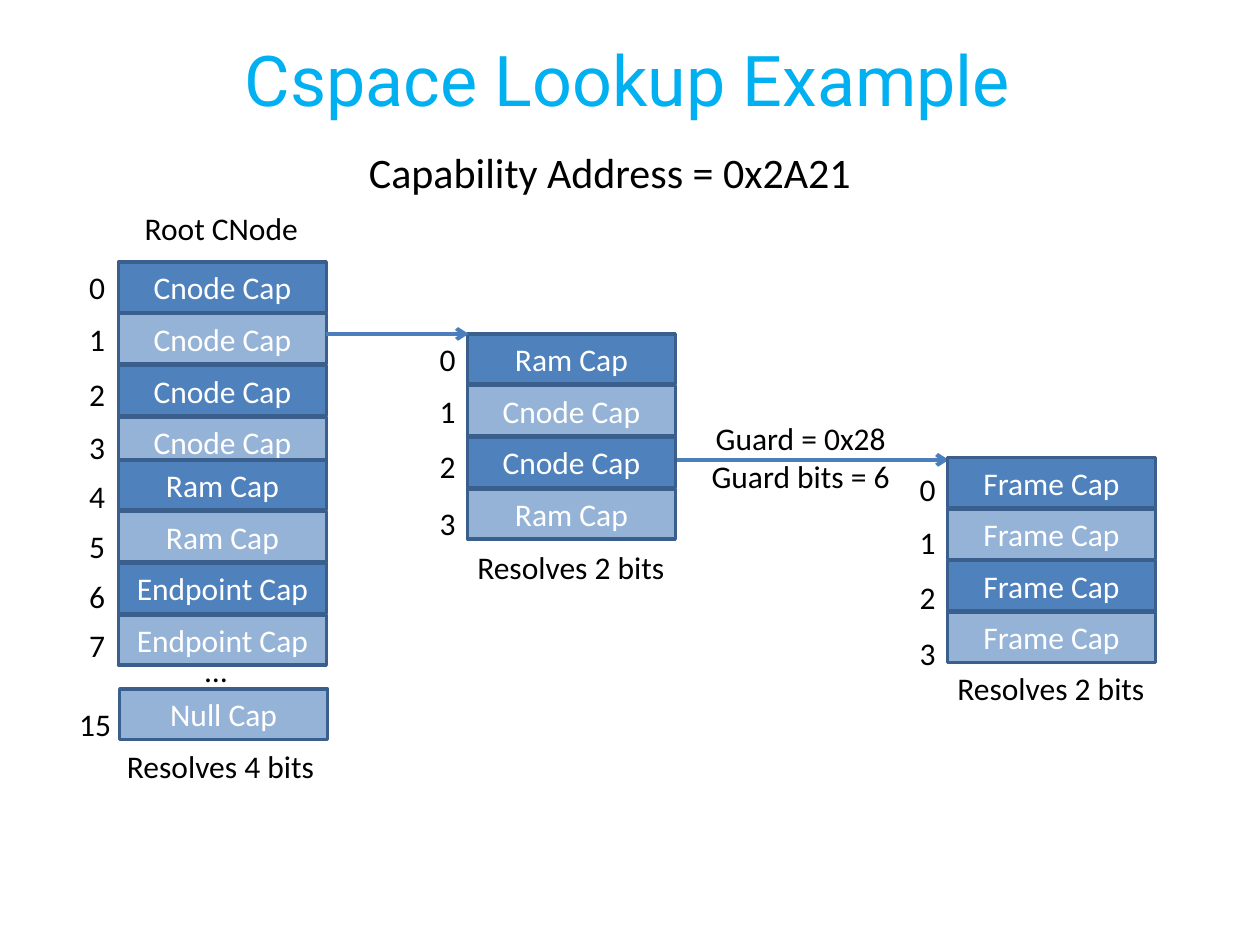
from lxml import etree
from pptx import Presentation
from pptx import util as u
from pptx.dml.color import RGBColor
from pptx.enum import shapes, text
from pptx.oxml import ns

Inches = u.Inches
CELL_WIDTH, CELL_HEIGHT, CELL_PITCH = 1.65, 0.4, 0.41


def color(hex_string):
    return RGBColor.from_string(hex_string)


class Diagram:
    font = "Calibri"
    size = 18
    fills = ("4F81BD", "95B3D7")
    border = "3A5F8C"
    arrow_color = "4B7EBC"

    def __init__(self, slide):
        self.slide = slide
        self.shapes = slide.shapes

    def start_group(self):
        self.shapes = self.slide.shapes.add_group_shape().shapes

    def end_group(self):
        self.shapes = self.slide.shapes

    def set_words(self, shape, words, align, ink="000000", size=None, font=None):
        shape.text_frame.text = words
        for paragraph in shape.text_frame.paragraphs:
            paragraph.alignment = align
            for run in paragraph.runs:
                run.font.name = font or self.font
                run.font.size = u.Pt(size or self.size)
                run.font.color.rgb = color(ink)

    def title(self, words, left, top, width, height):
        box = self.shapes.add_textbox(*map(Inches, (left, top, width, height)))
        box.text_frame.word_wrap = True
        box.text_frame.vertical_anchor = text.MSO_ANCHOR.MIDDLE
        self.set_words(box, words, text.PP_ALIGN.CENTER, "00B0F0", 40, "Roboto")

    def label(self, words, left, top, width, height=0.4, size=None, align=text.PP_ALIGN.LEFT):
        box = self.shapes.add_textbox(*map(Inches, (left, top, width, height)))
        box.text_frame.word_wrap = False
        box.text_frame.auto_size = text.MSO_AUTO_SIZE.SHAPE_TO_FIT_TEXT
        self.set_words(box, words, align, size=size)

    def cell(self, words, left, top, fill):
        box = self.shapes.add_shape(
            shapes.MSO_SHAPE.RECTANGLE,
            *map(Inches, (left, top, CELL_WIDTH, CELL_HEIGHT)))
        box.shadow.inherit = False
        box.fill.solid()
        box.fill.fore_color.rgb = color(fill)
        box.line.color.rgb = color(self.border)
        box.line.width = u.Pt(2)
        box.text_frame.vertical_anchor = text.MSO_ANCHOR.TOP
        self.set_words(box, words, text.PP_ALIGN.CENTER, "FFFFFF")

    def cells(self, names, left, top):
        for row, name in enumerate(names):
            self.cell(name, left, top + row * CELL_PITCH, self.fills[row % 2])

    def indices(self, left, tops):
        for index, top in enumerate(tops):
            self.label(str(index), left, top, 0.33)

    def arrow(self, start_x, end_x, y):
        connector = self.shapes.add_connector(
            shapes.MSO_CONNECTOR.STRAIGHT, *map(Inches, (start_x, y, end_x, y)))
        connector.line.color.rgb = color(self.arrow_color)
        connector.line.width = u.Pt(2.25)
        properties = connector._element.spPr
        outline = properties.find(ns.qn("a:ln"))
        etree.SubElement(outline, ns.qn("a:tailEnd"), type="arrow")
        etree.SubElement(properties, ns.qn("a:effectLst"))


def main():
    presentation = Presentation()
    presentation.slide_width, presentation.slide_height = Inches(10), Inches(7.5)
    diagram = Diagram(presentation.slides.add_slide(presentation.slide_layouts[6]))

    # Guarded link, behind the tables
    diagram.arrow(5.17, 7.53, 3.65)

    # Headings
    diagram.title("Cspace Lookup Example", -0.02, 0, 10, 1.25)
    diagram.label("Capability Address = 0x2A21", 2.83, 1.11, 4.06, 0.5, size=24)

    # Root CNode, in two overlapping blocks and a last slot
    diagram.label("Root CNode", 1.05, 1.61, 1.43)
    diagram.cells(["Cnode Cap"] * 4, 0.94, 2.08)
    diagram.cells(["Ram Cap"] * 2 + ["Endpoint Cap"] * 2, 0.94, 3.65)
    diagram.indices(0.61, [2.08, 2.49, 2.93, 3.35, 3.74, 4.13, 4.53, 4.92])
    diagram.label("…", 1.53, 5.12, 0.38)
    diagram.cell("Null Cap", 0.95, 5.47, diagram.fills[1])
    diagram.label("15", 0.53, 5.55, 0.46)
    diagram.label("Resolves 4 bits", 0.91, 5.88, 1.7)

    # Guard on the link
    diagram.label("Guard = 0x28\nGuard bits = 6", 5.54, 3.28, 1.63, 0.71,
                  align=text.PP_ALIGN.CENTER)

    # Second-level CNode
    diagram.start_group()
    diagram.cells(["Ram Cap", "Cnode Cap", "Cnode Cap", "Ram Cap"], 3.71, 2.65)
    diagram.indices(3.39, [2.65, 3.06, 3.5, 3.95])
    diagram.arrow(2.59, 3.72, 2.65)
    diagram.label("Resolves 2 bits", 3.69, 4.3, 1.7)

    # Third-level CNode
    diagram.start_group()
    diagram.cells(["Frame Cap"] * 4, 7.52, 3.63)
    diagram.indices(7.2, [3.68, 4.1, 4.54, 4.98])
    diagram.label("Resolves 2 bits", 7.5, 5.26, 1.7)
    diagram.end_group()

    presentation.save("out.pptx")


if __name__ == "__main__":
    main()
